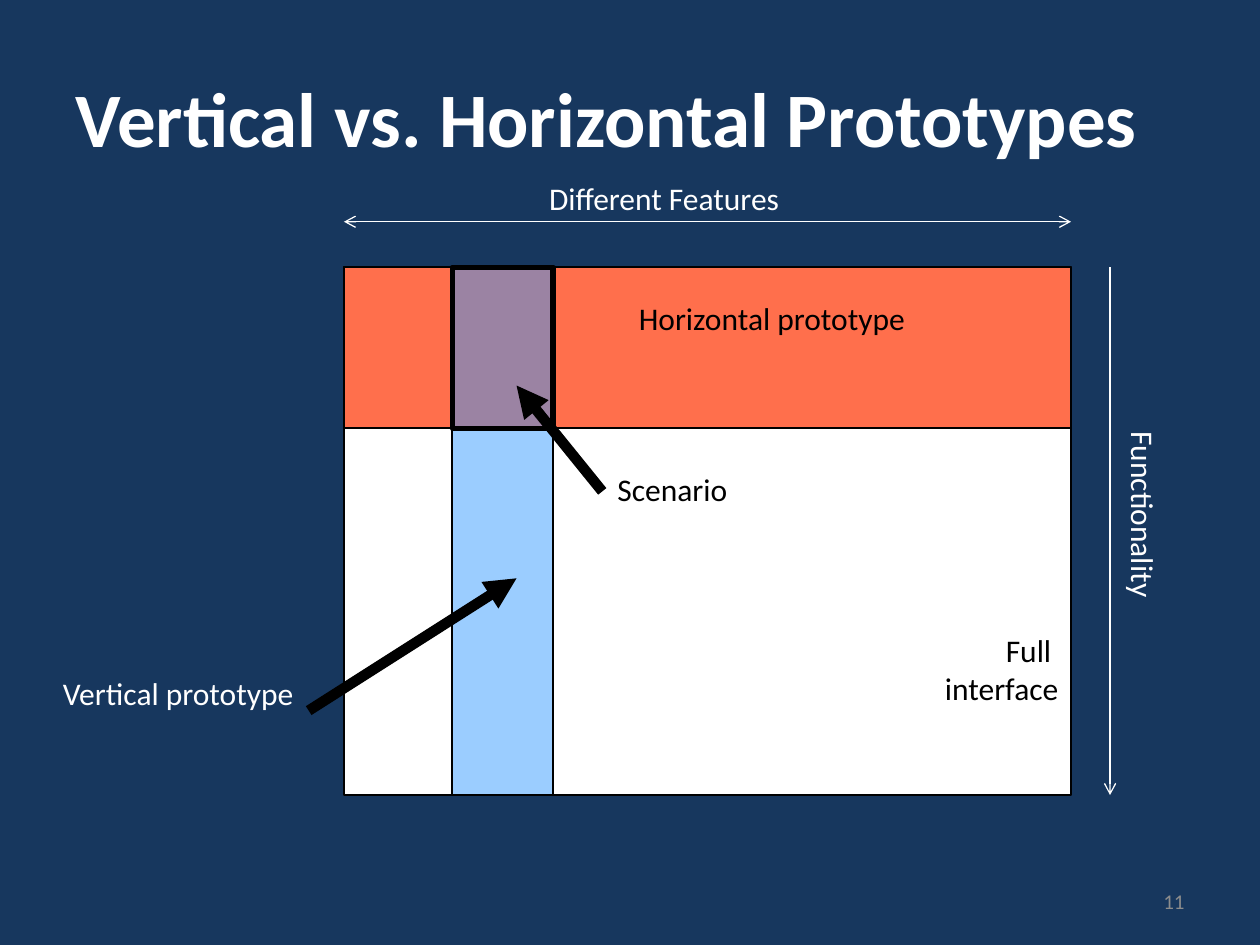
from lxml import etree
from pptx import Presentation
from pptx.dml.color import RGBColor
from pptx.enum.shapes import MSO_CONNECTOR, MSO_SHAPE
from pptx.enum.text import MSO_ANCHOR, MSO_AUTO_SIZE, PP_ALIGN
from pptx.oxml.ns import qn
from pptx.util import Inches, Pt

LEFT, RIGHT = PP_ALIGN.LEFT, PP_ALIGN.RIGHT
TOP, MIDDLE = MSO_ANCHOR.TOP, MSO_ANCHOR.MIDDLE
GROW, FIXED = MSO_AUTO_SIZE.SHAPE_TO_FIT_TEXT, MSO_AUTO_SIZE.NONE
RECTANGLE, STRAIGHT = MSO_SHAPE.RECTANGLE, MSO_CONNECTOR.STRAIGHT
FONT = "Calibri"
COLOURS = {
    "background": "17375E",
    "white": "FFFFFF",
    "black": "000000",
    "grey": "8C8C8C",
    "horizontal": "FF3300",
    "vertical": "3399FF",
}


def colour(name):
    """Return the named colour."""
    return RGBColor.from_string(COLOURS[name])


def add_text(page, text, left, top, width, height, *, size=18, ink="white", bold=False,
             align=LEFT, anchor=TOP, inset=None, wrap=False, rotation=0):
    """Add a text box with one format throughout."""
    box = page.shapes.add_textbox(Inches(left), Inches(top), Inches(width), Inches(height))
    box.rotation = rotation
    frame = box.text_frame
    frame.word_wrap = wrap
    frame.auto_size = FIXED if wrap else GROW
    frame.vertical_anchor = anchor
    if inset is not None:
        frame.margin_left = frame.margin_right = Inches(inset)
        frame.margin_top = frame.margin_bottom = Inches(inset)
    para = frame.paragraphs[0]
    para.alignment = align
    para.text = text
    para.font.name = FONT
    para.font.size = Pt(size)
    para.font.bold = bold
    para.font.color.rgb = colour(ink)
    for span in para.runs:
        span.font.name = FONT
        span.font.size = Pt(size)
        span.font.bold = bold
        span.font.color.rgb = colour(ink)


def add_area(page, left, top, width, height, *, fill=None, opacity=100, weight=1):
    """Add an outlined rectangle, optionally with a translucent fill."""
    area = page.shapes.add_shape(
        RECTANGLE, Inches(left), Inches(top), Inches(width), Inches(height))
    area.shadow.inherit = False
    area.line.color.rgb = colour("black")
    area.line.width = Pt(weight)
    if fill is None:
        area.fill.background()
        return
    area.fill.solid()
    area.fill.fore_color.rgb = colour(fill)
    if opacity < 100:
        tint = area.fill._xPr.find(qn("a:solidFill"))[0]
        etree.SubElement(tint, qn("a:alpha"), val=str(opacity * 1000))


def add_arrow(page, start, end, *, ink="black", weight=6, head=None, tail="triangle"):
    """Add a straight arrow between two points."""
    arrow = page.shapes.add_connector(STRAIGHT, *map(Inches, start + end))
    arrow.line.color.rgb = colour(ink)
    arrow.line.width = Pt(weight)
    outline = arrow.line._get_or_add_ln()
    for tag, kind in (("a:headEnd", head), ("a:tailEnd", tail)):
        if kind:
            etree.SubElement(outline, qn(tag), type=kind)
    etree.SubElement(arrow._element.spPr, qn("a:effectLst"))


def add_diagram(page, left, top, width, height):
    """Draw the interface with its two prototypes and their overlap."""
    band, column, column_left = 1.28, 0.8, left + 0.86
    add_area(page, left, top, width, height, fill="white")
    add_text(page, "Vertical prototype", left - 2.23, top + 3.23, 1.87, 0.3, inset=0)
    add_text(page, "Scenario", left + 2.17, top + 1.61, 1.43, 0.65, ink="black", inset=0)
    add_area(page, left, top, width, band, fill="horizontal", opacity=70)
    add_text(page, "Horizontal prototype", left + 2.34, top + 0.25, 2.15, 0.3,
             ink="black", inset=0)
    add_area(page, column_left, top, column, height, fill="vertical", opacity=49)
    add_area(page, column_left, top, column, band, weight=3)
    target = left + 1.37
    add_arrow(page, (left + 2.05, top + 1.78), (target, top + 0.94))
    add_text(page, "Full \vinterface", left + 4.28, top + 2.89, 1.39, 1.3,
             ink="black", align=RIGHT, inset=0)
    add_arrow(page, (left - 0.28, top + 3.52), (target, top + 2.47))


def add_axes(page, left, top, width, height):
    """Draw the labelled feature and functionality axes around the diagram."""
    features, functions = top - 0.36, left + width + 0.31
    thin = {"ink": "white", "weight": 0.75, "tail": "arrow"}
    add_arrow(page, (left, features), (left + width, features), head="arrow", **thin)
    add_arrow(page, (functions, top), (functions, top + height), **thin)
    add_text(page, "Different Features", left + 1.53, features - 0.39, 2.07, 0.4)
    add_text(page, "Functionality", functions - 0.5, top + 1.77, 1.53, 0.4, rotation=90)


def main():
    """Build and save the slide."""
    deck = Presentation()
    deck.slide_width, deck.slide_height = Inches(10), Inches(7.5)
    page = deck.slides.add_slide(deck.slide_layouts[6])
    page.background.fill.solid()
    page.background.fill.fore_color.rgb = colour("background")
    add_text(page, "Vertical vs. Horizontal Prototypes", 0.5, 0.3, 9, 1.25,
             size=44, bold=True, anchor=MIDDLE, wrap=True)
    add_text(page, "11", 7.17, 6.95, 2.33, 0.4,
             size=12, ink="grey", align=RIGHT, anchor=MIDDLE, wrap=True)
    interface = (2.73, 2.12, 5.77, 4.19)
    add_diagram(page, *interface)
    add_axes(page, *interface)
    deck.save("out.pptx")


if __name__ == "__main__":
    main()
